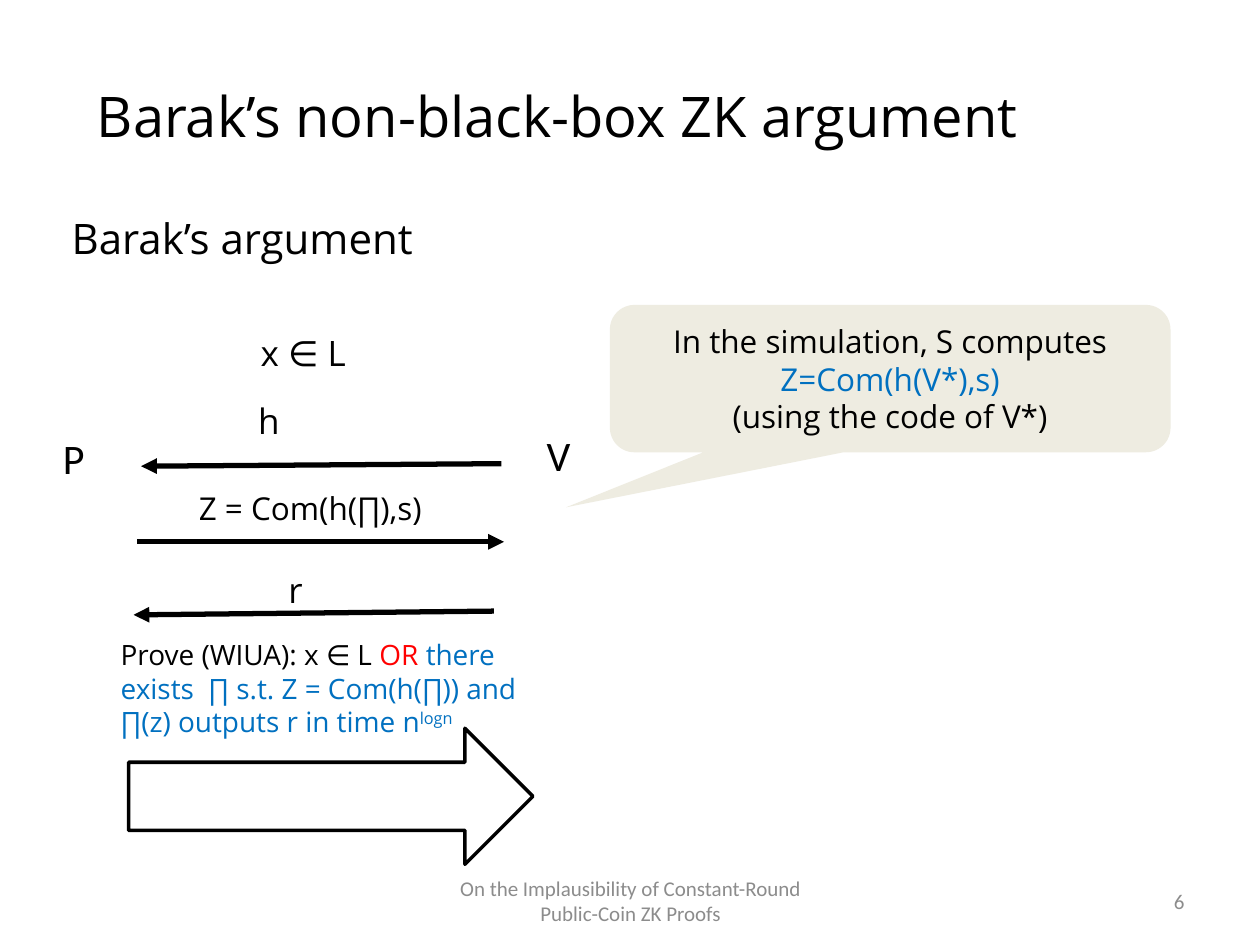
from lxml import etree
from pptx import Presentation
from pptx import util as u
from pptx.dml import color
from pptx.enum import shapes, text
from pptx.oxml import ns

COLORS = {"black": "000000", "red": "FF0000", "blue": "0070C0",
          "gray": "8C8C8C", "beige": "EEECE1"}
BODY, PLAIN = "Open Sans", "Calibri"
LEFT, CENTER, RIGHT = text.PP_ALIGN.LEFT, text.PP_ALIGN.CENTER, text.PP_ALIGN.RIGHT


def rgb(name):
    return color.RGBColor.from_string(COLORS[name])


def inches(values):
    return [u.Inches(value) for value in values]


def write(frame, paragraphs, size, font=BODY, align=LEFT, middle=False):
    layout = {
        "word_wrap": True,
        "vertical_anchor": text.MSO_ANCHOR.MIDDLE if middle else text.MSO_ANCHOR.TOP,
        "auto_size": text.MSO_AUTO_SIZE.NONE if middle else text.MSO_AUTO_SIZE.SHAPE_TO_FIT_TEXT,
    }
    for name, value in layout.items():
        setattr(frame, name, value)
    for index, spans in enumerate(paragraphs):
        para = frame.paragraphs[0] if index == 0 else frame.add_paragraph()
        para.alignment = align
        for words, tint, *baseline in spans:
            span = para.add_run()
            span.text = words
            for name, value in {"name": font, "size": u.Pt(size)}.items():
                setattr(span.font, name, value)
            span.font.color.rgb = rgb(tint)
            if baseline:
                span._r.get_or_add_rPr().set("baseline", str(baseline[0] * 1000))


def add_text(page, place, spans, size, **style):
    box = page.shapes.add_textbox(*inches(place))
    write(box.text_frame, [spans], size, **style)


def add_label(page, place, words, size, tint="black", **style):
    add_text(page, place, [(words, tint)], size, **style)


def add_message_arrow(page, start, end):
    arrow = page.shapes.add_connector(
        shapes.MSO_CONNECTOR.STRAIGHT, *inches(start + end))
    arrow.line.width = u.Pt(3)
    arrow.line.color.rgb = rgb("black")
    head = etree.SubElement(arrow.line._get_or_add_ln(), ns.qn("a:tailEnd"))
    head.set("type", "triangle")
    etree.SubElement(arrow._element.spPr, ns.qn("a:effectLst"))


def add_callout(page, place, paragraphs):
    callout = page.shapes.add_shape(
        shapes.MSO_SHAPE.ROUNDED_RECTANGULAR_CALLOUT, *inches(place))
    for index, value in enumerate((-0.578, 0.873, 0.167)):
        callout.adjustments[index] = value
    callout.shadow.inherit = False
    callout.fill.solid()
    callout.fill.fore_color.rgb = rgb("beige")
    callout.line.fill.background()
    write(callout.text_frame, paragraphs, 18, align=CENTER, middle=True)


def add_block_arrow(page, place):
    arrow = page.shapes.add_shape(shapes.MSO_SHAPE.RIGHT_ARROW, *inches(place))
    arrow.shadow.inherit = False
    arrow.fill.background()
    arrow.line.color.rgb = rgb("black")
    arrow.line.width = u.Pt(2)


def main():
    deck = Presentation()
    deck.slide_width, deck.slide_height = inches((10, 7.5))
    page = deck.slides.add_slide(deck.slide_layouts[6])

    add_label(page, (0.67, 0.29, 9, 1.25), "Barak’s non-black-box ZK argument", 32, middle=True)
    add_label(page, (0.47, 1.64, 3.75, 0.5), "Barak’s argument", 24)
    add_label(page, (1.97, 2.58, 1.25, 0.43), "x ∈ L", 20)
    add_label(page, (0.4, 3.38, 0.67, 0.5), "P", 24, font=PLAIN)
    add_label(page, (4.24, 3.36, 0.67, 0.5), "V", 24, font=PLAIN)

    messages = [
        ("h", (1.95, 3.12, 0.92, 0.43), 20, (3.98, 3.68), (1.12, 3.7)),
        ("Z = Com(h(∏),s)", (1.48, 3.83, 2.2, 0.4), 18, (1.09, 4.3), (4, 4.3)),
        ("r", (2.19, 4.46, 0.92, 0.43), 20, (3.92, 4.85), (1.06, 4.88)),
    ]
    for words, place, size, start, end in messages:
        add_label(page, place, words, size)
        add_message_arrow(page, start, end)

    add_text(page, (0.86, 5.01, 3.59, 0.91), [
        ("Prove (WIUA): x ∈ L ", "black"),
        ("OR ", "red"),
        ("there exists  ∏ s.t. Z = Com(h(∏)) and ∏(z) outputs r in time n", "blue"),
        ("logn", "blue", 30),
    ], 16)
    add_block_arrow(page, (1.02, 5.78, 3.21, 1.08))
    add_callout(page, (4.84, 2.42, 4.45, 1.17), [
        [("In the simulation, S computes", "black")],
        [("Z=Com(h(V*),s)", "blue")],
        [("(using the code of V*)", "black")],
    ])

    footer = {"tint": "gray", "font": PLAIN, "middle": True}
    add_label(page, (3.42, 6.95, 3.17, 0.4),
              "On the Implausibility of Constant-Round Public-Coin ZK Proofs",
              12, align=CENTER, **footer)
    add_label(page, (7.17, 6.95, 2.33, 0.4), "6", 12, align=RIGHT, **footer)
    deck.save("out.pptx")


if __name__ == "__main__":
    main()
